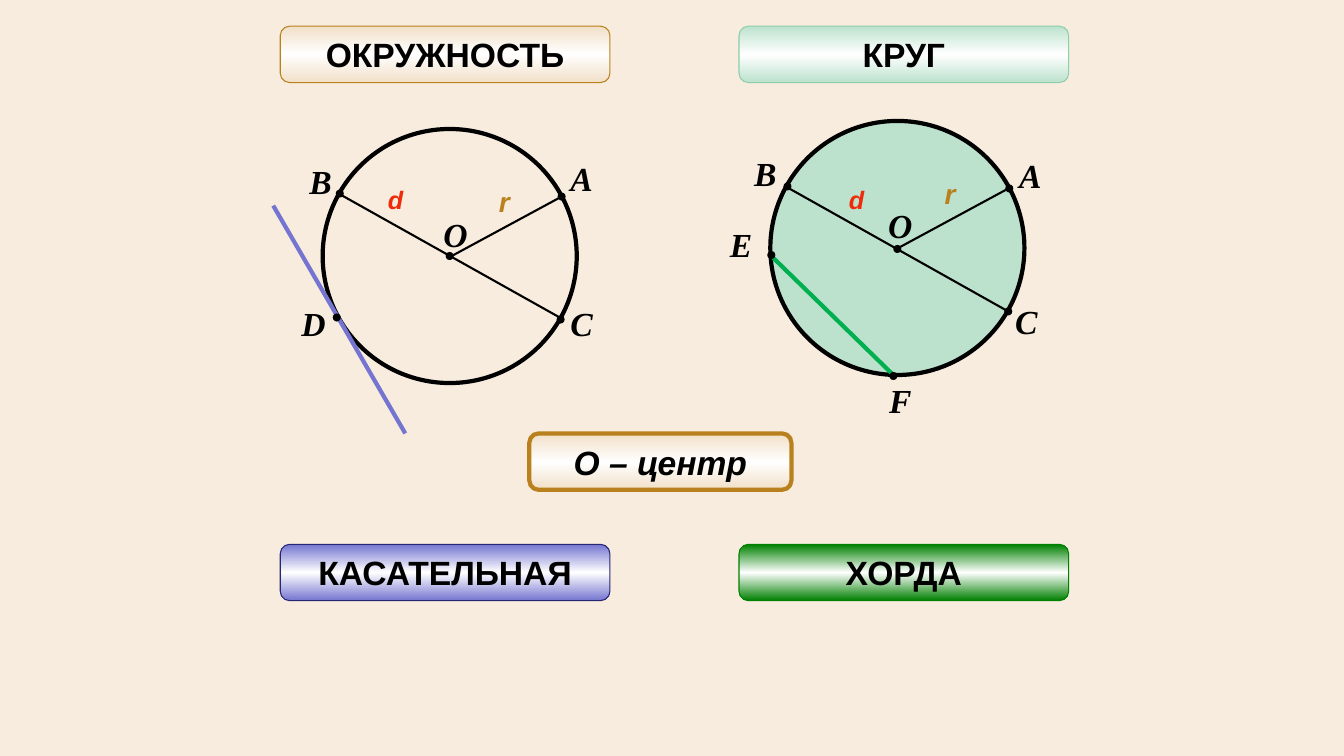
from copy import deepcopy

from lxml.etree import SubElement
from pptx import Presentation
from pptx.dml.color import RGBColor
from pptx.enum.shapes import MSO_CONNECTOR, MSO_SHAPE
from pptx.enum.text import MSO_ANCHOR, PP_ALIGN
from pptx.oxml.ns import qn
from pptx.util import Inches, Pt

CREAM = RGBColor(0xF7, 0xEC, 0xDE)
BLACK = RGBColor(0, 0, 0)
WHITE = RGBColor(0xFF, 0xFF, 0xFF)
SAND = RGBColor(0xF1, 0xDF, 0xC7)
GOLD = RGBColor(0xB9, 0x81, 0x1D)
MINT = RGBColor(0xBC, 0xE2, 0xCD)
SAGE = RGBColor(0x8E, 0xCE, 0xAB)
LILAC = RGBColor(0x75, 0x75, 0xD1)
NAVY = RGBColor(0x26, 0x26, 0x73)
GREEN = RGBColor(0, 0x80, 0)
LEAF = RGBColor(0, 0xB0, 0x50)
RED = RGBColor(0xF0, 0x2B, 0x0A)

SERIF, SANS = "Times New Roman", "Arial"
DISC, DOT = 2.52, 0.08

# text, left, top, width, edge of gradient, outline, outline width, italic
BUTTONS = [
    ("ОКРУЖНОСТЬ", 2.78, 0.26, 3.27, SAND, GOLD, 0.75, False),
    ("КРУГ", 7.33, 0.26, 3.27, MINT, SAGE, 0.75, False),
    ("О – центр", 5.25, 4.3, 2.6, SAND, GOLD, 3, True),
    ("КАСАТЕЛЬНАЯ", 2.78, 5.4, 3.27, LILAC, NAVY, 0.75, False),
    ("ХОРДА", 7.33, 5.4, 3.27, GREEN, GREEN, 0.75, False),
]
RADII = [
    (3.34, 1.91, 5.57, 3.16), (4.48, 2.54, 5.59, 1.94),
    (8.91, 2.46, 10.02, 1.86), (7.81, 1.86, 10, 3.09),
]
# letter, label left and top, dot centre
POINTS = [
    ("А", 5.56, 1.52, 5.57, 1.95), ("B", 2.97, 1.55, 3.37, 1.92),
    ("C", 5.56, 2.96, 5.56, 3.17), ("D", 2.89, 2.96, 3.34, 3.15),
    ("O", 4.3, 2.07, 4.46, 2.54),
    ("А", 10.01, 1.49, 10.01, 1.87), ("B", 7.38, 1.47, 7.81, 1.85),
    ("C", 9.97, 2.94, 10, 3.09), ("E", 7.14, 2.17, 7.65, 2.53),
    ("F", 8.72, 3.72, 8.86, 3.73), ("O", 8.71, 1.98, 8.9, 2.47),
]
# letter, left, top, height, size, colour
MARKS = [
    ("r", 4.85, 1.78, 0.43, 20, GOLD), ("r", 9.27, 1.7, 0.43, 20, GOLD),
    ("d", 3.75, 1.78, 0.4, 18, RED), ("d", 8.32, 1.78, 0.4, 18, RED),
]


def write(shape, text, face, size, color, italic=True):
    frame = shape.text_frame
    frame.word_wrap = True
    par = frame.paragraphs[0]
    par.text = text
    font = par.font
    font.name, font.size, font.color.rgb = face, Pt(size), color
    font.bold, font.italic = True, italic
    return par


def add_label(slide, text, x, y, w, h, face, size, color):
    box = slide.shapes.add_textbox(Inches(x), Inches(y), Inches(w), Inches(h))
    write(box, text, face, size, color)


def add_oval(slide, x, y, size, fill=None, width=0):
    oval = slide.shapes.add_shape(MSO_SHAPE.OVAL, Inches(x), Inches(y),
                                  Inches(size), Inches(size))
    oval.shadow.inherit = False
    if fill is None:
        oval.fill.background()
    else:
        oval.fill.solid()
        oval.fill.fore_color.rgb = fill
    if width:
        oval.line.color.rgb = BLACK
        oval.line.width = Pt(width)
    else:
        oval.line.fill.background()


def add_line(slide, ends, color, width):
    line = slide.shapes.add_connector(MSO_CONNECTOR.STRAIGHT,
                                      *[Inches(v) for v in ends])
    line.line.color.rgb = color
    line.line.width = Pt(width)
    SubElement(line._element.spPr, qn("a:effectLst"))


def blend(fill, edge):
    """Fill from edge colour through white and back, top to bottom."""
    fill.gradient()
    fill.gradient_angle = 90
    first = fill._fill._gradFill.find(qn("a:gsLst"))[0]
    first.addnext(deepcopy(first))
    for stop, place, color in zip(fill.gradient_stops, (0, 0.5, 1),
                                  (edge, WHITE, edge)):
        stop.position = place
        stop.color.rgb = color


def add_button(slide, text, x, y, w, edge, rim, width, italic):
    button = slide.shapes.add_shape(MSO_SHAPE.ROUNDED_RECTANGLE, Inches(x),
                                    Inches(y), Inches(w), Inches(0.56))
    button.shadow.inherit = False
    button.adjustments[0] = 0.167
    blend(button.fill, edge)
    button.line.color.rgb = rim
    button.line.width = Pt(width)
    button.text_frame.vertical_anchor = MSO_ANCHOR.MIDDLE
    write(button, text, SANS, 24, BLACK, italic).alignment = PP_ALIGN.CENTER


def main():
    deck = Presentation()
    deck.slide_width, deck.slide_height = Inches(13.33), Inches(7.5)
    slide = deck.slides.add_slide(deck.slide_layouts[6])
    slide.background.fill.solid()
    slide.background.fill.fore_color.rgb = CREAM

    add_oval(slide, 3.2, 1.28, DISC, width=3)
    add_oval(slide, 7.64, 1.2, DISC, MINT, 3)
    for ends in RADII:
        add_line(slide, ends, BLACK, 1.5)
    add_line(slide, (2.71, 2.04, 4.02, 4.3), LILAC, 3)
    add_line(slide, (7.65, 2.54, 8.86, 3.72), LEAF, 3)
    for text, x, y, mid_x, mid_y in POINTS:
        add_oval(slide, mid_x - DOT / 2, mid_y - DOT / 2, DOT, BLACK)
        add_label(slide, text, x, y, 0.55, 0.5, SERIF, 24, BLACK)
    for text, x, y, h, size, color in MARKS:
        add_label(slide, text, x, y, 0.47, h, SANS, size, color)
    for button in BUTTONS:
        add_button(slide, *button)
    deck.save("out.pptx")


if __name__ == "__main__":
    main()
